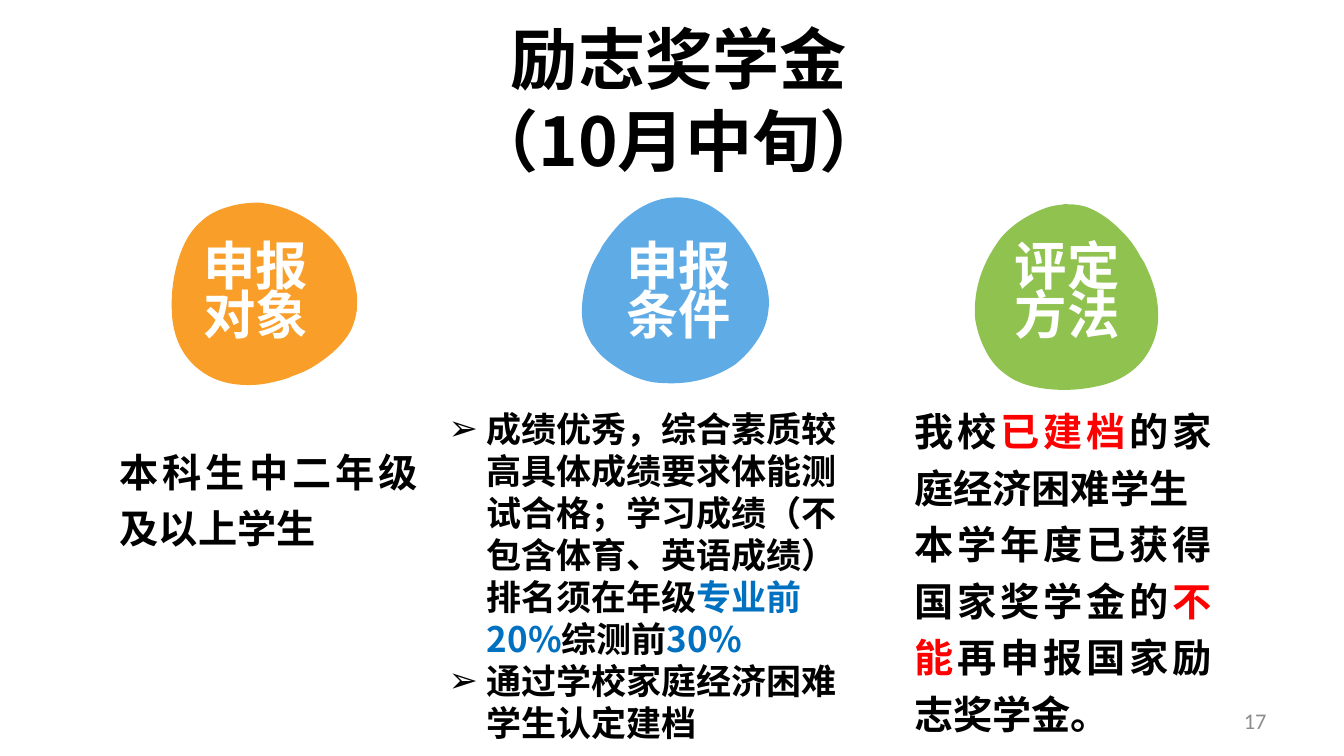
from math import cos, radians, sin

from lxml.etree import SubElement
from pptx import Presentation
from pptx.dml.color import RGBColor
from pptx.enum.text import MSO_ANCHOR, MSO_AUTO_SIZE, PP_ALIGN
from pptx.oxml.ns import qn
from pptx.util import Pt

PX = 9144
CJK = "Noto Sans CJK SC"
BLACK, WHITE, RED, BLUE, GRAY = "000000", "FFFFFF", "FF0000", "0070C0", "8C8C8C"

TITLE = [["励志奖学金"], ["（10月中旬）"]]
TOPICS = [
    {"label": [["申报"], ["对象"]], "color": "F89E29",
     "corner": (161, 200), "turn": 158.4, "label_left": 191},
    {"label": [["申报"], ["条件"]], "color": "5EABE6",
     "corner": (579, 201), "turn": 299.2, "label_left": 611},
    {"label": [["评定"], ["方法"]], "color": "90C250",
     "corner": (961, 212), "turn": 58.8, "label_left": 996},
]
APPLICANTS = [["本科生中二年级及以上学生"]]
CONDITIONS = [
    ["成绩优秀，综合素质较高具体成绩要求体能测试合格；学习成绩（不包含体育、英语成绩）排名须在年级",
     ("专业前20%", BLUE), "综测前", ("30%", BLUE)],
    ["通过学校家庭经济困难学生认定建档"],
]
METHOD = [
    ["我校", ("已建档", RED), "的家庭经济困难学生"],
    ["本学年度已获得国家奖学金的", ("不能", RED), "再申报国家励志奖学金。"],
]
PAGE_NUMBER = [["17"]]

BLOB_SIZE = (189, 181)
BLOB_START = (209, 374)
BLOB_CURVES = [
    ((221, 380), (234, 382), (247, 382)),
    ((258, 382), (268, 380), (279, 377)),
    ((279, 377), (279, 377), (279, 377)),
    ((283, 376), (286, 375), (290, 373)),
    ((293, 372), (296, 371), (298, 370)),
    ((306, 367), (314, 362), (322, 356)),
    ((337, 345), (347, 332), (350, 323)),
    ((352, 318), (353, 313), (354, 307)),
    ((354, 305), (354, 304), (354, 302)),
    ((355, 292), (352, 279), (347, 266)),
    ((342, 253), (334, 241), (326, 234)),
    ((307, 216), (285, 204), (257, 201)),
    ((247, 201), (237, 202), (227, 205)),
    ((216, 208), (206, 213), (198, 221)),
    ((188, 230), (182, 242), (178, 254)),
    ((171, 275), (169, 296), (171, 317)),
    ((174, 342), (186, 362), (209, 374)),
]


def rgb(color):
    return RGBColor.from_string(color)


def place(shape, box):
    shape.left, shape.top, shape.width, shape.height = (length * PX for length in box)


def write(shape, lines, size, pitch, align, color=BLACK, font=CJK, bold=True,
          bullet=None, wrap=True, anchor=MSO_ANCHOR.TOP):
    frame = shape.text_frame
    frame.word_wrap = wrap
    frame.auto_size = MSO_AUTO_SIZE.NONE
    frame.vertical_anchor = anchor
    for index, line in enumerate(lines):
        paragraph = frame.add_paragraph() if index else frame.paragraphs[0]
        paragraph.alignment = align
        paragraph.line_spacing = Pt(pitch)
        paragraph.space_before = Pt(0)
        properties = paragraph._p.get_or_add_pPr()
        if bullet:
            properties.set("marL", str(38 * PX))
            properties.set("indent", str(-38 * PX))
            SubElement(properties, qn("a:buChar")).set("char", bullet)
        paragraph.font.size = Pt(size)
        paragraph.font.bold = bold
        paragraph.font.name = font
        paragraph.font.color.rgb = rgb(color)
        defaults = properties.find(qn("a:defRPr"))
        SubElement(defaults, qn("a:ea")).set("typeface", CJK)
        for part in line:
            run = paragraph.add_run()
            if isinstance(part, tuple):
                run.text, accent = part
                run.font.color.rgb = rgb(accent)
            else:
                run.text = part


def add_text(slide, box, lines, size, pitch, align, **style):
    shape = slide.shapes.add_textbox(0, 0, 0, 0)
    place(shape, box)
    write(shape, lines, size, pitch, align, **style)


def unturned(point):
    width, height = BLOB_SIZE
    left, top = TOPICS[0]["corner"]
    angle = radians(-TOPICS[0]["turn"])
    dx, dy = point[0] - left - width / 2, point[1] - top - height / 2
    return (round((width / 2 + dx * cos(angle) - dy * sin(angle)) * PX),
            round((height / 2 + dx * sin(angle) + dy * cos(angle)) * PX))


def add_command(outline, tag, points):
    command = SubElement(outline, qn(tag))
    for point in points:
        x, y = unturned(point)
        vertex = SubElement(command, qn("a:pt"))
        vertex.set("x", str(x))
        vertex.set("y", str(y))


def add_blob(slide, corner, turn, color):
    builder = slide.shapes.build_freeform(*unturned(BLOB_START))
    builder.add_line_segments([unturned(curve[-1]) for curve in BLOB_CURVES])
    shape = builder.convert_to_shape()
    outline = next(shape._element.iter(qn("a:path")))
    for command in list(outline):
        outline.remove(command)
    for side, length in zip("wh", BLOB_SIZE):
        outline.set(side, str(length * PX))
    add_command(outline, "a:moveTo", [BLOB_START])
    for curve in BLOB_CURVES:
        add_command(outline, "a:cubicBezTo", curve)
    SubElement(outline, qn("a:close"))
    place(shape, corner + BLOB_SIZE)
    shape.rotation = turn
    shape.shadow.inherit = False
    shape.fill.solid()
    shape.fill.fore_color.rgb = rgb(color)
    shape.line.fill.background()


def main():
    presentation = Presentation()
    presentation.slide_width = 1333 * PX
    presentation.slide_height = 750 * PX
    slide = presentation.slides.add_slide(presentation.slide_layouts[1])

    for topic in TOPICS:
        add_blob(slide, topic["corner"], topic["turn"], topic["color"])
        add_text(slide, (topic["label_left"], 240, 125, 111), topic["label"],
                 37.4, 35, PP_ALIGN.CENTER, color=WHITE, wrap=False)

    title = slide.shapes.title
    place(title, (408, 12, 531, 172))
    write(title, TITLE, 48, 58, PP_ALIGN.CENTER)

    add_text(slide, (109, 430, 315, 118), APPLICANTS, 28, 40.4,
             PP_ALIGN.JUSTIFY, font="Calibri")
    conditions = slide.placeholders[1]
    place(conditions, (435, 399, 433, 347))
    write(conditions, CONDITIONS, 25, 30, PP_ALIGN.LEFT, bullet="➢")
    add_text(slide, (897, 390, 315, 345), METHOD, 28, 40.4,
             PP_ALIGN.JUSTIFY, font="Calibri")
    add_text(slide, (955, 695, 311, 40), PAGE_NUMBER, 16, 19.5, PP_ALIGN.RIGHT,
             color=GRAY, font="Calibri", bold=False, anchor=MSO_ANCHOR.MIDDLE)

    presentation.save("out.pptx")


if __name__ == "__main__":
    main()
